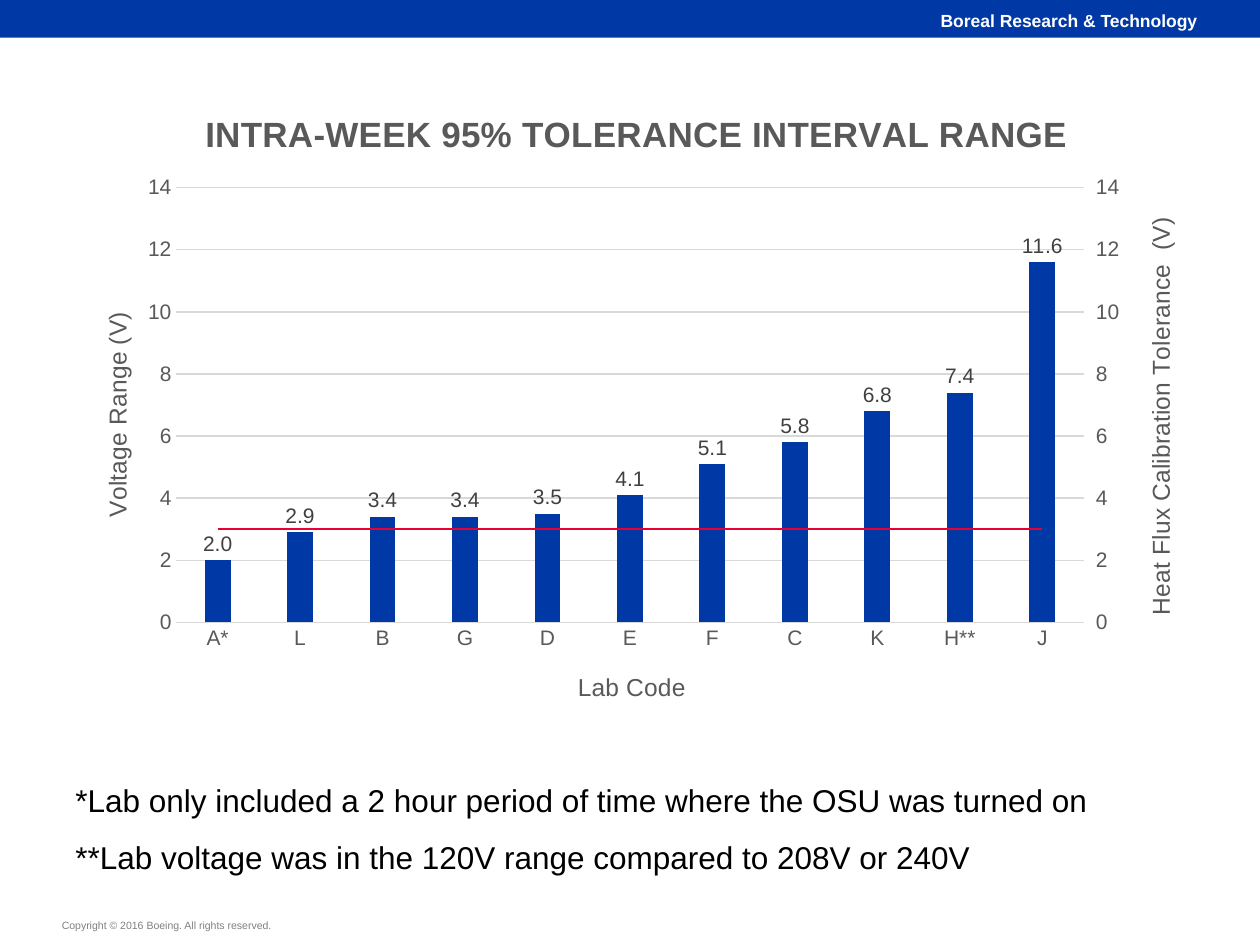
import copy
import pptx
import pptx.util
import pptx.oxml
import pptx.oxml.ns
import pptx.chart.axis
import pptx.chart.data
import pptx.dml.color
import pptx.enum.chart
import pptx.enum.shapes
import pptx.enum.text

Pt = pptx.util.Pt
qn = pptx.oxml.ns.qn
FONT = "Arial"
BLUE, RED, GRAY, RULE = "0039A6", "E70033", "595959", "D9D9D9"
LABS = ["A*", "L", "B", "G", "D", "E", "F", "C", "K", "H**", "J"]
VOLTS = [2.0, 2.9, 3.4, 3.4, 3.5, 4.1, 5.1, 5.8, 6.8, 7.4, 11.6]
LIMIT = 3


def color(code):
    return pptx.dml.color.RGBColor.from_string(code)


def style(font, size, code, bold=False):
    font.name = FONT
    font.size = Pt(size)
    font.bold = bold
    font.color.rgb = color(code)


def stroke(line, code, width):
    line.color.rgb = color(code)
    line.width = Pt(width)


def add_band(slide):
    band = slide.shapes.add_shape(pptx.enum.shapes.MSO_SHAPE.RECTANGLE, Pt(0), Pt(0), Pt(720), Pt(21.6))
    band.shadow.inherit = False
    band.fill.solid()
    band.fill.fore_color.rgb = color(BLUE)
    band.line.fill.background()


def add_text(slide, box, lines, size, code, bold=False, align="LEFT",
             anchor="TOP", inset=(0, 0), space=None):
    frame = slide.shapes.add_textbox(*map(Pt, box)).text_frame
    frame.word_wrap = True
    frame.vertical_anchor = pptx.enum.text.MSO_ANCHOR[anchor]
    frame.margin_left = frame.margin_right = Pt(inset[0])
    frame.margin_top = frame.margin_bottom = Pt(inset[1])
    for i, line in enumerate(lines):
        para = frame.add_paragraph() if i else frame.paragraphs[0]
        para.alignment = pptx.enum.text.PP_ALIGN[align]
        para.line_spacing = space
        run = para.add_run()
        run.text = line
        style(run.font, size, code, bold)


def layout(x, y, w=None, h=None):
    parts = [] if w is None else [("layoutTarget", "inner")]
    parts += [("xMode", "edge"), ("yMode", "edge"), ("x", x), ("y", y)]
    if w is not None:
        parts += [("w", w), ("h", h)]
    body = "".join(f'<c:{tag} val="{val}"/>' for tag, val in parts)
    return pptx.oxml.parse_xml(
        f'<c:layout {pptx.oxml.ns.nsdecls("c")}><c:manualLayout>{body}</c:manualLayout></c:layout>')


def set_title(title, text, size, place, bold=False, turn=False):
    frame = title.text_frame
    run = frame.paragraphs[0].add_run()
    run.text = text
    style(run.font, size, GRAY, bold)
    if turn:
        frame._txBody.bodyPr.set("rot", "-5400000")
        frame._txBody.bodyPr.set("vert", "horz")
    root = title._element
    for old in root.findall(qn("c:layout")):
        root.remove(old)
    root.find(qn("c:tx")).addnext(layout(*place))


def set_axis(axis, text, place, turn=True, tick="NONE"):
    axis.major_tick_mark = pptx.enum.chart.XL_TICK_MARK[tick]
    axis.minor_tick_mark = pptx.enum.chart.XL_TICK_MARK.NONE
    style(axis.tick_labels.font, 12, GRAY)
    set_title(axis.axis_title, text, 14, place, turn=turn)


def set_scale(axis):
    axis.minimum_scale, axis.maximum_scale, axis.major_unit = 0, 14, 2
    axis.tick_labels.number_format = "0"
    axis.tick_labels.number_format_is_linked = False
    axis.format.line.fill.background()


def split_line(chart):
    area = chart._chartSpace.chart.plotArea
    bars = area.find(qn("c:barChart"))
    ser = bars.findall(qn("c:ser"))[1]
    for tag in ser.findall(qn("c:invertIfNegative")):
        ser.remove(tag)
    line = pptx.oxml.parse_xml(
        f'<c:lineChart {pptx.oxml.ns.nsdecls("c")}><c:grouping val="standard"/>'
        '<c:varyColors val="0"/><c:marker val="1"/>'
        '<c:axId val="5001"/><c:axId val="5002"/></c:lineChart>')
    line.find(qn("c:varyColors")).addnext(ser)
    bars.addnext(line)

    cat, val = (copy.deepcopy(area.find(qn(tag))) for tag in ("c:catAx", "c:valAx"))
    for axis, own, other in ((cat, "5001", "5002"), (val, "5002", "5001")):
        axis.find(qn("c:axId")).set("val", own)
        axis.find(qn("c:crossAx")).set("val", other)
    val.find(qn("c:axPos")).set("val", "r")
    val.find(qn("c:crosses")).set("val", "max")
    area.find(qn("c:valAx")).addnext(val)
    val.addnext(cat)
    pptx.chart.axis.CategoryAxis(cat).visible = False

    for old in area.findall(qn("c:layout")):
        area.remove(old)
    area.insert(0, layout(0.1, 0.15, 0.8, 0.69))
    return pptx.chart.axis.ValueAxis(val)


def add_chart(slide):
    data = pptx.chart.data.CategoryChartData(number_format="0.0")
    data.categories = LABS
    data.add_series("Series 1", VOLTS)
    data.add_series("Series 2", [LIMIT] * len(LABS))
    kind = pptx.enum.chart.XL_CHART_TYPE.COLUMN_CLUSTERED
    chart = slide.shapes.add_chart(kind, Pt(36), Pt(53.3), Pt(648), Pt(360), data).chart
    style(chart.font, 10, "000000")
    chart.has_legend = False
    base, left = chart.category_axis, chart.value_axis
    right = split_line(chart)
    set_title(chart.chart_title, "INTRA-WEEK 95% TOLERANCE INTERVAL RANGE", 20, (0.12, 0.02), bold=True)

    set_axis(base, "Lab Code", (0.45, 0.91), turn=False)
    stroke(base.format.line, RULE, 0.75)
    set_axis(left, "Voltage Range (V)", (0.03, 0.34))
    set_scale(left)
    stroke(left.major_gridlines.format.line, RULE, 0.75)
    set_axis(right, "Heat Flux Calibration Tolerance  (V)", (0.95, 0.19), tick="OUTSIDE")
    set_scale(right)
    right.has_major_gridlines = False

    bars, line = chart.plots
    bars.gap_width, bars.overlap = 219, -27
    bars.vary_by_categories = False
    volts = bars.series[0]
    volts.format.fill.solid()
    volts.format.fill.fore_color.rgb = color(BLUE)
    tags = volts.data_labels
    tags.show_value = True
    tags.position = pptx.enum.chart.XL_LABEL_POSITION.OUTSIDE_END
    tags.number_format = "0.0"
    tags.number_format_is_linked = False
    style(tags.font, 12, "404040")
    limit = line.series[0]
    limit.smooth = False
    limit.marker.style = pptx.enum.chart.XL_MARKER_STYLE.NONE
    stroke(limit.format.line, RED, 1)


def main():
    deck = pptx.Presentation()
    deck.slide_width, deck.slide_height = Pt(720), Pt(540)
    slide = deck.slides.add_slide(deck.slide_layouts[6])
    add_band(slide)
    add_text(slide, (34.6, 524, 162.7, 8.8), ["Copyright © 2016 Boeing. All rights reserved."],
             6, "808080", anchor="BOTTOM", inset=(0.7, 0.7))
    add_text(slide, (288.7, 5.8, 395.3, 12.2), ["Boreal Research & Technology"],
             10, "FFFFFF", bold=True, align="RIGHT")
    add_text(slide, (36, 432, 648, 68.4),
             ["*Lab only included a 2 hour period of time where the OSU was turned on",
              "**Lab voltage was in the 120V range compared to 208V or 240V"],
             18, "000000", inset=(7.2, 3.6), space=1.5)
    add_chart(slide)
    deck.save("out.pptx")


if __name__ == "__main__":
    main()
